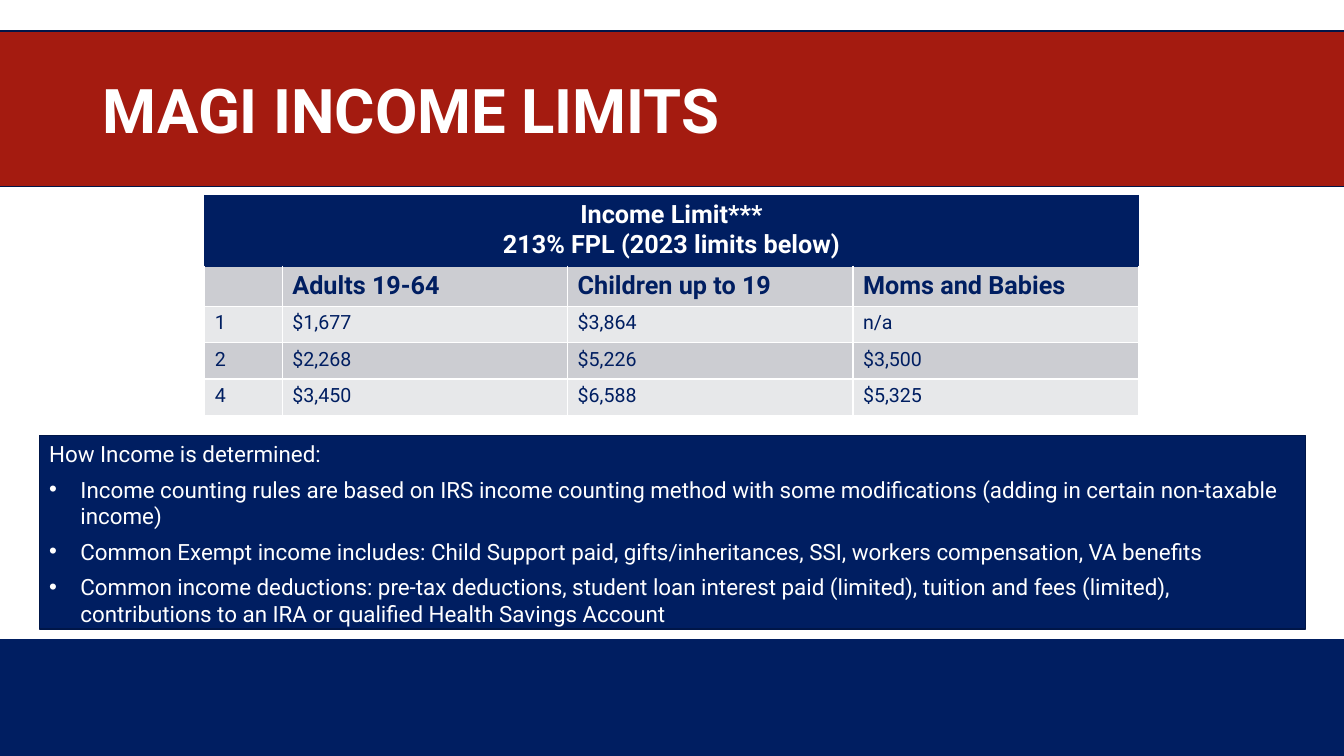
from dataclasses import dataclass

from lxml.etree import SubElement
from pptx import Presentation
from pptx.dml.color import RGBColor
from pptx.enum.shapes import MSO_SHAPE
from pptx.enum.text import MSO_ANCHOR, PP_ALIGN
from pptx.oxml import parse_xml
from pptx.oxml.ns import nsdecls, qn
from pptx.util import Inches, Pt


@dataclass(frozen=True)
class Theme:
    font: str = "Roboto"
    navy: str = "001E61"
    outline: str = "001648"
    red: str = "A41B10"
    white: str = "FFFFFF"
    dark_row: str = "CCCDD2"
    light_row: str = "E7E8EA"
    title_size: int = 44
    heading_size: int = 18
    body_size: int = 16
    value_size: int = 14


def paint(fill, color):
    fill.solid()
    fill.fore_color.rgb = RGBColor.from_string(color)


def add_bullet(paragraph, indent):
    properties = paragraph._p.get_or_add_pPr()
    properties.set("marL", str(Inches(indent)))
    properties.set("indent", str(-Inches(indent)))
    SubElement(properties, qn("a:buFont")).set("typeface", "Arial")
    SubElement(properties, qn("a:buChar")).set("char", "•")


def set_borders(cell, **colors):
    """Draw one-point cell borders; keys are L, R, T and B, in that order."""
    properties = cell._tc.get_or_add_tcPr()
    for place, (side, color) in enumerate(colors.items()):
        properties.insert(place, parse_xml(
            f'<a:ln{side} {nsdecls("a")} w="{Pt(1)}"><a:solidFill>'
            f'<a:srgbClr val="{color}"/></a:solidFill></a:ln{side}>'))


class SlideBuilder:
    def __init__(self, page, theme):
        self.page = page
        self.theme = theme

    def add_text(self, frame, lines, *, size, color, bold=False, align=PP_ALIGN.LEFT,
                 bullets_from=None, indent=0.31, space_after=0, line_spacing=None):
        """Fill a text frame, one paragraph a line, bulleted from the given index."""
        for index, line in enumerate(lines):
            paragraph = frame.paragraphs[0] if index == 0 else frame.add_paragraph()
            if bullets_from is not None and index >= bullets_from:
                add_bullet(paragraph, indent)
            paragraph.alignment = align
            paragraph.space_after = Pt(space_after)
            if line_spacing:
                paragraph.line_spacing = line_spacing
            span = paragraph.add_run()
            span.text = line
            span.font.name = self.theme.font
            span.font.size = Pt(size)
            span.font.bold = bold
            span.font.color.rgb = RGBColor.from_string(color)

    def panel(self, left, top, width, height, fill, line=None):
        box = self.page.shapes.add_shape(
            MSO_SHAPE.RECTANGLE, Inches(left), Inches(top), Inches(width), Inches(height))
        box.shadow.inherit = False
        paint(box.fill, fill)
        if line:
            paint(box.line.fill, line)
            box.line.width = Pt(1)
        else:
            box.line.fill.background()
        frame = box.text_frame
        frame.word_wrap = True
        frame.vertical_anchor = MSO_ANCHOR.TOP
        return frame

    def title(self, left, top, width, height, text):
        box = self.page.shapes.add_textbox(
            Inches(left), Inches(top), Inches(width), Inches(height))
        frame = box.text_frame
        frame.word_wrap = True
        frame.vertical_anchor = MSO_ANCHOR.MIDDLE
        self.add_text(frame, [text], size=self.theme.title_size,
                      color=self.theme.white, bold=True, line_spacing=0.9)

    def table(self, left, top, widths, heights, heading, rows):
        """Add a table with a merged heading above a bold row of column names."""
        theme = self.theme
        table = self.page.shapes.add_table(
            len(heights), len(widths), Inches(left), Inches(top),
            Inches(sum(widths)), Inches(sum(heights))).table
        table.first_row = table.horz_banding = False
        for column, width in zip(table.columns, widths):
            column.width = Inches(width)
        for row, height in zip(table.rows, heights):
            row.height = Inches(height)

        for cell in table.rows[0].cells:
            paint(cell.fill, theme.navy)
            set_borders(cell, L=theme.navy, R=theme.navy, T=theme.navy, B=theme.navy)
        table.cell(0, 0).merge(table.cell(0, len(widths) - 1))
        self.add_text(table.cell(0, 0).text_frame, heading, size=theme.heading_size,
                      color=theme.white, bold=True, align=PP_ALIGN.CENTER)

        for number, values in enumerate(rows, start=1):
            names = number == 1
            for cell, value in zip(table.rows[number].cells, values):
                paint(cell.fill, theme.dark_row if number % 2 else theme.light_row)
                set_borders(cell, L=theme.white, R=theme.white,
                            T=theme.navy if names else theme.white, B=theme.white)
                if value:
                    self.add_text(cell.text_frame, [value], color=theme.navy, bold=names,
                                  size=theme.heading_size if names else theme.value_size)


def main():
    deck = Presentation()
    deck.slide_width, deck.slide_height = Inches(13.33), Inches(7.5)
    theme = Theme()
    builder = SlideBuilder(deck.slides.add_slide(deck.slide_layouts[6]), theme)

    builder.panel(0, 6.34, 13.33, 1.16, theme.navy)
    builder.panel(-0.38, 0.31, 13.83, 1.54, theme.red, theme.outline)
    builder.title(0.92, 0.4, 11.5, 1.45, "MAGI INCOME LIMITS")
    builder.table(
        2.03, 1.94, [0.77] + [2.83] * 3, [0.62] + [0.36] * 4,
        ["Income Limit***", "213% FPL (2023 limits below)"],
        [
            ["", "Adults 19-64", "Children up to 19", "Moms and Babies"],
            ["1", "$1,677", "$3,864", "n/a"],
            ["2", "$2,268", "$5,226", "$3,500"],
            ["4", "$3,450", "$6,588", "$5,325"],
        ])
    rules = builder.panel(0.39, 4.32, 12.56, 1.92, theme.navy, theme.outline)
    builder.add_text(rules, [
        "How Income is determined:",
        "Income counting rules are based on IRS income counting method with some "
        "modifications (adding in certain non-taxable income)",
        "Common Exempt income includes: Child Support paid, gifts/inheritances, SSI, "
        "workers compensation, VA benefits",
        "Common income deductions: pre-tax deductions, student loan interest paid "
        "(limited), tuition and fees (limited), contributions to an IRA or qualified "
        "Health Savings Account",
    ], size=theme.body_size, color=theme.white, bullets_from=1, space_after=6)

    deck.save("out.pptx")


if __name__ == "__main__":
    main()
